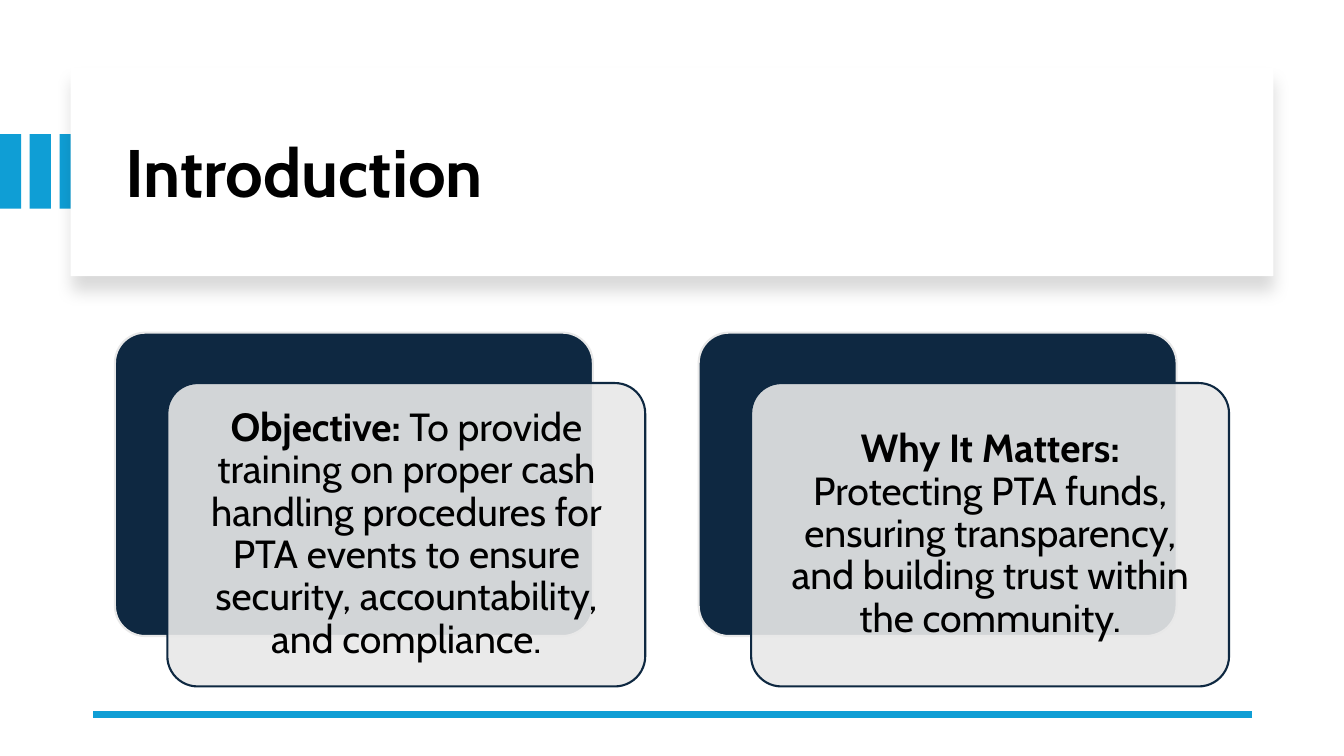
from lxml.etree import SubElement
from pptx import Presentation
from pptx.dml.color import RGBColor
from pptx.enum.shapes import MSO_CONNECTOR, MSO_SHAPE
from pptx.enum.text import MSO_ANCHOR, PP_ALIGN
from pptx.oxml.ns import qn
from pptx.util import Inches, Pt

BLUE, NAVY, GREY, WHITE, BLACK = "0F9ED5", "0E2841", "E8E8E8", "FFFFFF", "000000"


def paint(color_format, color, alpha=None):
    color_format.rgb = RGBColor.from_string(color)
    if alpha is not None:
        node = color_format._xFill.find(qn("a:srgbClr"))
        SubElement(node, qn("a:alpha"), val=str(alpha * 1000))


def write(frame, runs, size=28, align=PP_ALIGN.LEFT, inset=0.1):
    frame.word_wrap = True
    frame.vertical_anchor = MSO_ANCHOR.MIDDLE
    frame.margin_left = frame.margin_right = Inches(inset)
    frame.margin_top = frame.margin_bottom = Inches(inset)
    paragraph = frame.paragraphs[0]
    paragraph.alignment = align
    paragraph.line_spacing = 0.9
    for text, bold in runs:
        run = paragraph.add_run()
        run.text = text
        run.font.name = "Cabin"
        run.font.size = Pt(size)
        run.font.bold = bold
        paint(run.font.color, BLACK)


presentation = Presentation()
presentation.slide_width = Inches(13.33)
presentation.slide_height = Inches(7.5)
slide = presentation.slides.add_slide(presentation.slide_layouts[5])
shapes = slide.shapes

bar_width, bar_pitch = 0.21, 0.295
for column in range(3):
    bar = shapes.add_shape(MSO_SHAPE.RECTANGLE, Inches(column * bar_pitch), Inches(1.33),
                           Inches(bar_width), Inches(0.74))
    bar.shadow.inherit = False
    bar.fill.solid()
    paint(bar.fill.fore_color, BLUE)
    bar.line.fill.background()

panel = shapes.add_shape(MSO_SHAPE.RECTANGLE, Inches(0.7), Inches(0.67), Inches(11.93), Inches(2.07))
panel.fill.solid()
paint(panel.fill.fore_color, WHITE)
panel.line.fill.background()
panel.shadow.inherit = False
effects = panel.element.spPr.find(qn("a:effectLst"))
shadow = SubElement(effects, qn("a:outerShdw"), blurRad=str(Pt(11)), dist=str(Pt(10)),
                    dir=str(90 * 60000), algn="t", rotWithShape="0")
shadow_color = SubElement(shadow, qn("a:srgbClr"), val=BLACK)
SubElement(shadow_color, qn("a:alpha"), val="15000")

title = shapes.title
title.left, title.top, title.width, title.height = Inches(1.14), Inches(0.89), Inches(11.13), Inches(1.7)
write(title.text_frame, [("Introduction", True)], size=48)
panel.element.addnext(title.element)

rule = shapes.add_connector(MSO_CONNECTOR.STRAIGHT, Inches(12.42), Inches(7.09), Inches(0.92), Inches(7.09))
paint(rule.line.color, BLUE)
rule.line.width = Pt(4.5)
SubElement(rule.element.spPr, qn("a:effectLst"))

cards = [
    ("Objective: ", "To provide training on proper cash handling procedures for PTA events "
                    "to ensure security, accountability, and compliance."),
    ("Why It Matters: ", "Protecting PTA funds, ensuring transparency, "
                         "and building trust within the community."),
]
card_left, card_top, card_pitch = 1.14, 3.3, 5.79
layers = [(0, 0, NAVY, GREY, None), (0.52, 0.5, GREY, NAVY, 90)]
for column, (heading, body) in enumerate(cards):
    for shift_right, shift_down, fill, line, alpha in layers:
        card = shapes.add_shape(MSO_SHAPE.ROUNDED_RECTANGLE,
                                Inches(card_left + column * card_pitch + shift_right),
                                Inches(card_top + shift_down), Inches(4.74), Inches(3.01))
        card.adjustments[0] = 0.1
        card.shadow.inherit = False
        card.fill.solid()
        paint(card.fill.fore_color, fill, alpha)
        paint(card.line.color, line)
        card.line.width = Pt(1.5)
    write(card.text_frame, [(heading, True), (body, False)], align=PP_ALIGN.CENTER, inset=0.12)

presentation.save("out.pptx")
